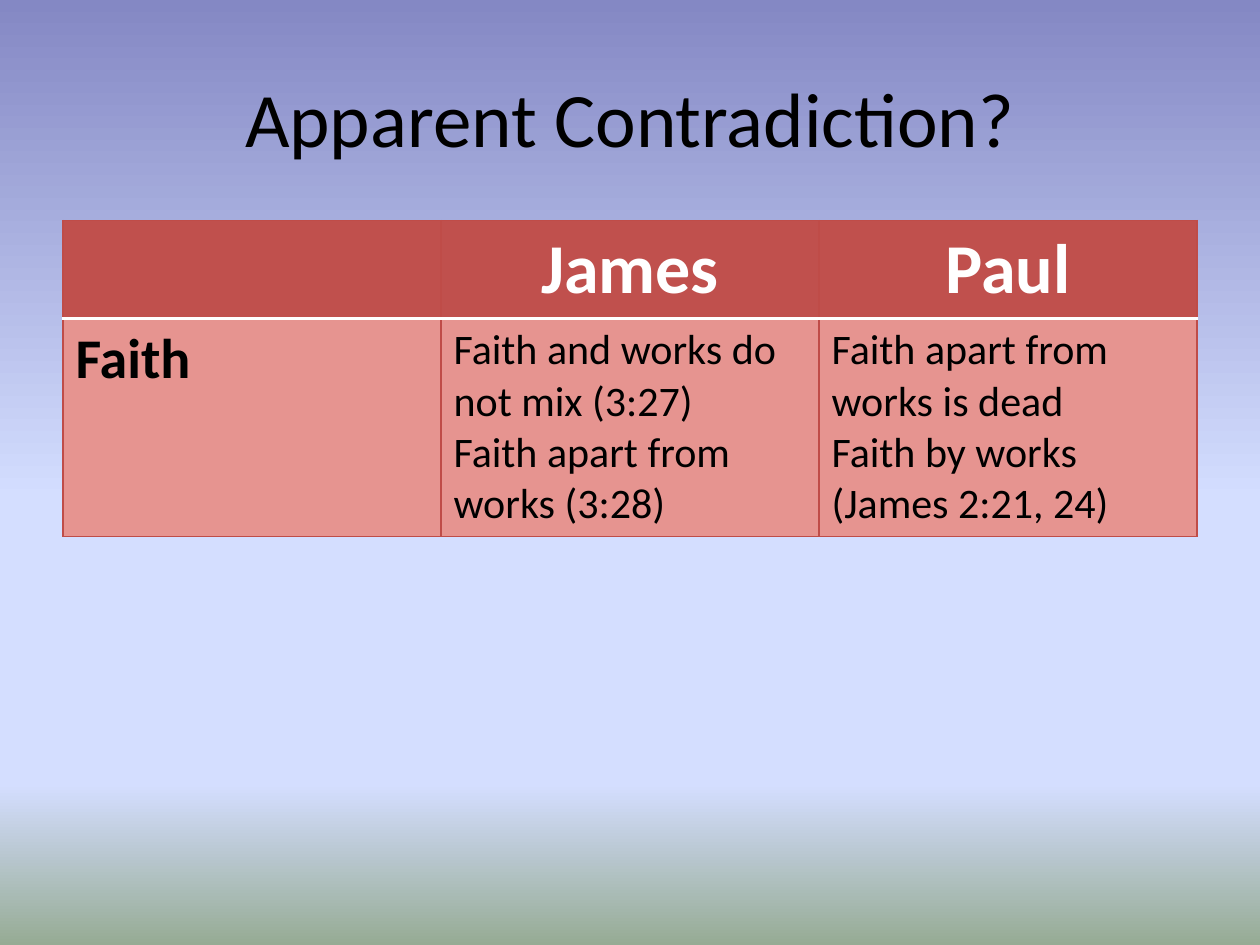
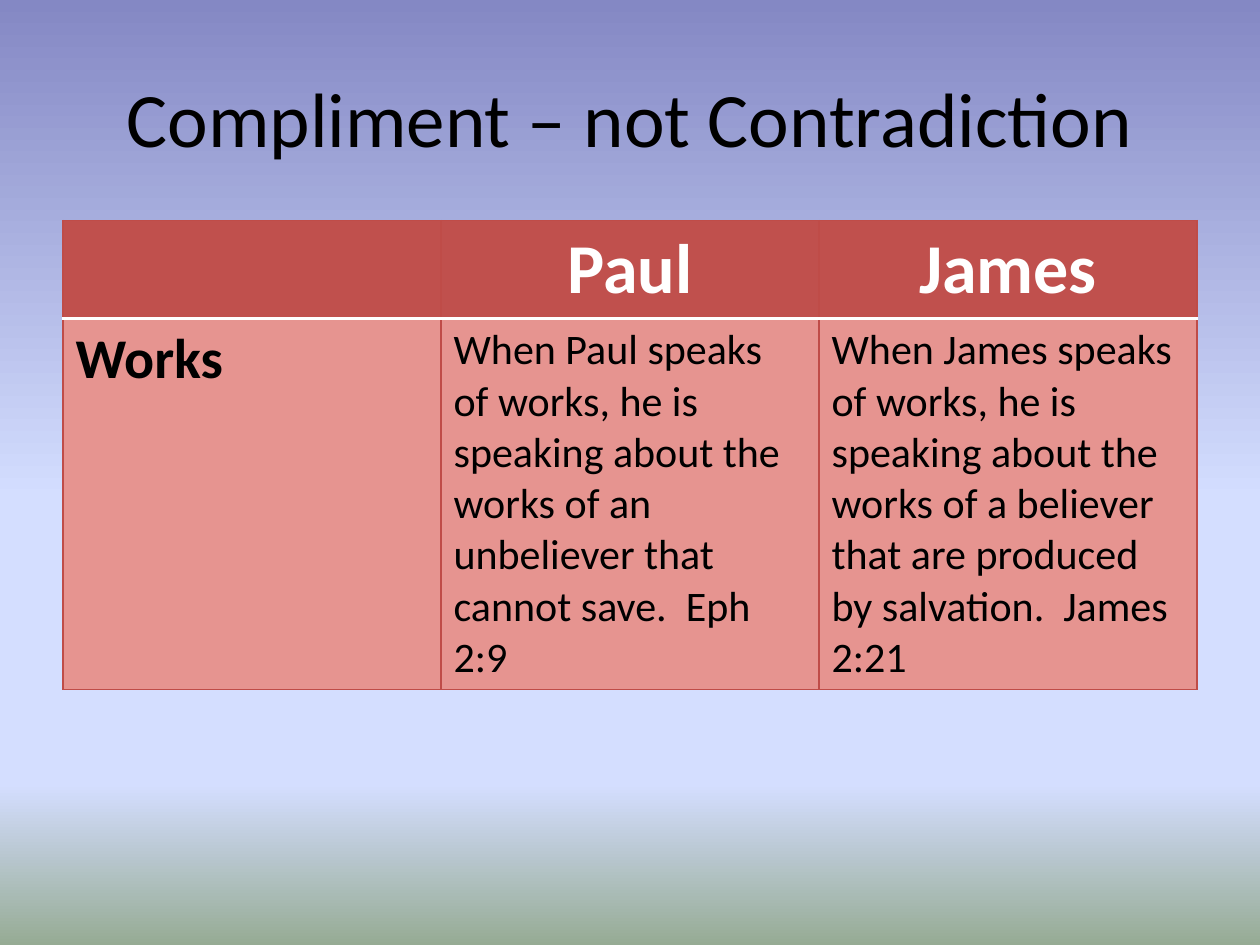
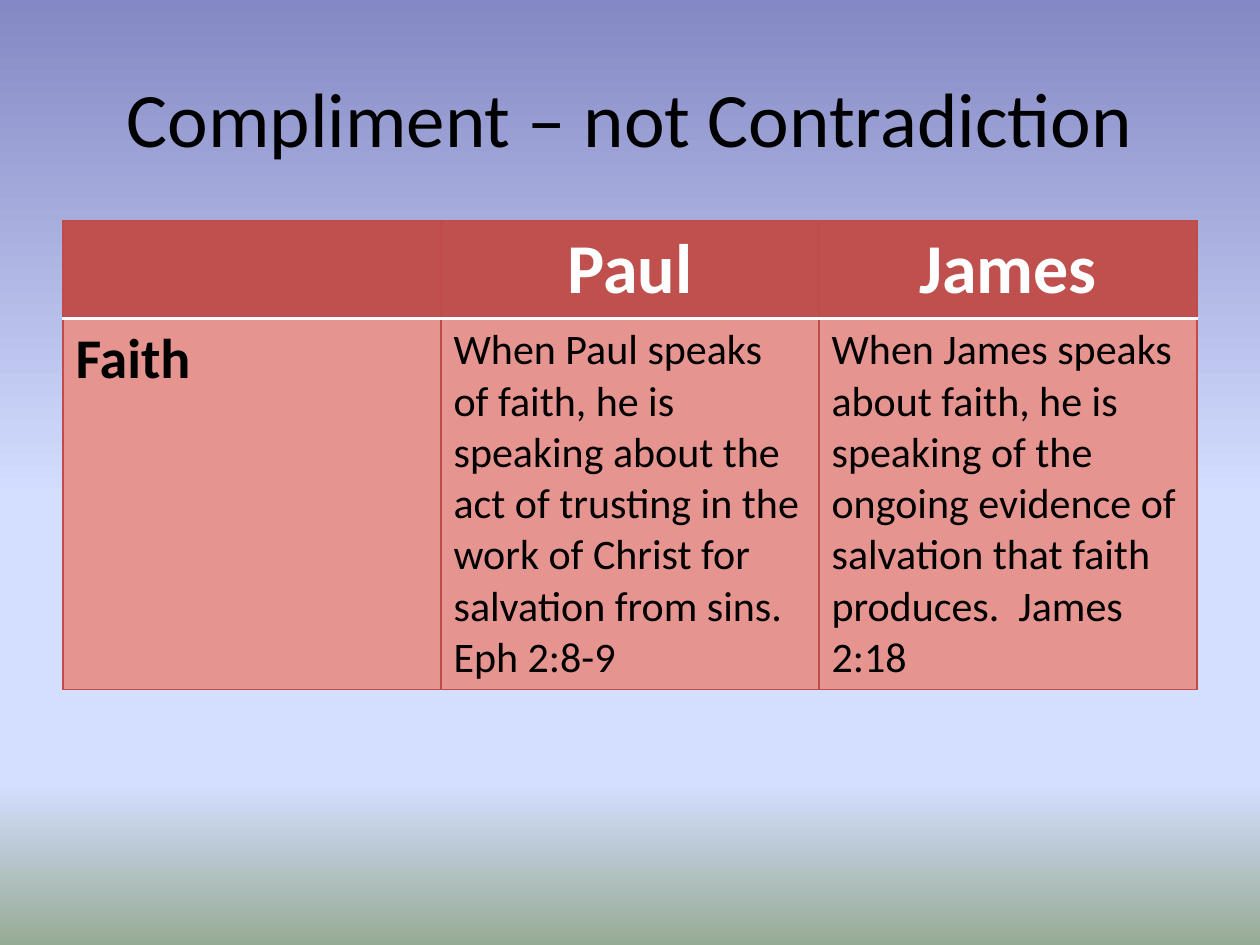
"""Build three slides that compare James and Paul in a two-row table."""
from lxml import etree
from pptx import Presentation
from pptx.dml.color import RGBColor
from pptx.enum.text import MSO_ANCHOR, PP_ALIGN
from pptx.oxml.ns import qn
from pptx.util import Inches, Pt

LEFT, CENTER = PP_ALIGN.LEFT, PP_ALIGN.CENTER
MIDDLE = MSO_ANCHOR.MIDDLE

SLIDES = [
    {"title": "Apparent Contradiction?",
     "header": ["", "James", "Paul"],
     "body": ["Faith",
              "Faith and works do not mix (3:27)\nFaith apart from works (3:28)",
              "Faith apart from works is dead\nFaith by works (James 2:21, 24)"],
     "body_height": 1.73},
    {"title": "Compliment – not Contradiction",
     "header": ["", "Paul", "James"],
     "body": ["Works",
              "When Paul speaks of works, he is speaking about the works of "
              "an unbeliever that cannot save.  Eph 2:9",
              "When James speaks of works, he is speaking about the works of "
              "a believer that are produced by salvation.  James 2:21"],
     "body_height": 2.94},
    {"title": "Compliment – not Contradiction",
     "header": ["", "Paul", "James"],
     "body": ["Faith",
              "When Paul speaks of faith, he is speaking about the act of "
              "trusting in the work of Christ for salvation from sins.  Eph 2:8-9",
              "When James speaks about faith, he is speaking of the ongoing "
              "evidence of salvation that faith produces.  James 2:18"],
     "body_height": 2.94},
]

COLORS = {"text": "000000", "light": "FFFFFF", "header": "C0504D",
          "body": "E69490", "border": "BF4C48"}
GRADIENT = [(0, "8488C4"), (53, "D4DEFF"), (83, "D4DEFF"), (100, "96AB94")]
FONT = "Calibri"
FORMATS = {
    "title": {"size": Pt(44), "bold": False, "color": "text", "align": CENTER},
    "header": {"size": Pt(40), "bold": True, "color": "light", "align": CENTER},
    "label": {"size": Pt(32), "bold": True, "color": "text", "align": LEFT},
    "body": {"size": Pt(24), "bold": False, "color": "text", "align": LEFT},
}
MARGIN, CONTENT_WIDTH = 0.5, 9
TITLE_TOP, TITLE_HEIGHT = 0.3, 1.25
TABLE_TOP, HEADER_HEIGHT = 1.75, 0.78
THIN, RULE = ("border", 0.75), ("light", 2)


def rgb(name):
    return RGBColor.from_string(COLORS[name])


def write(tf, text, style):
    fmt = FORMATS[style]
    tf.text = text
    for p in tf.paragraphs:
        p.alignment = fmt["align"]
        for r in p.runs:
            r.font.name = FONT
            r.font.color.rgb = rgb(fmt["color"])
            for name in ("size", "bold"):
                setattr(r.font, name, fmt[name])


def set_background(master):
    fill = master.background.fill
    fill.gradient()
    fill.gradient_angle = 270
    stops = master.element.find(".//" + qn("a:gsLst"))
    for stop in list(stops):
        stops.remove(stop)
    for position, color in GRADIENT:
        stop = etree.SubElement(stops, qn("a:gs"), pos=str(position * 1000))
        etree.SubElement(stop, qn("a:srgbClr"), val=color)


def set_borders(cell, borders):
    tcPr = cell._tc.get_or_add_tcPr()
    for i, (side, (color, width)) in enumerate(borders.items()):
        ln = etree.Element(qn("a:ln" + side), w=str(Pt(width)))
        fill = etree.SubElement(ln, qn("a:solidFill"))
        etree.SubElement(fill, qn("a:srgbClr"), val=COLORS[color])
        tcPr.insert(i, ln)


def add_title(s, text):
    box = s.shapes.add_textbox(Inches(MARGIN), Inches(TITLE_TOP),
                               Inches(CONTENT_WIDTH), Inches(TITLE_HEIGHT))
    tf = box.text_frame
    tf.word_wrap = True
    tf.vertical_anchor = MIDDLE
    write(tf, text, "title")


def add_comparison(s, content):
    rows = [content["header"], content["body"]]
    heights = [HEADER_HEIGHT, content["body_height"]]
    table = s.shapes.add_table(
        len(rows), len(rows[0]), Inches(MARGIN), Inches(TABLE_TOP),
        Inches(CONTENT_WIDTH), Inches(sum(heights))).table
    table.horz_banding = False
    for i, (texts, height) in enumerate(zip(rows, heights)):
        table.rows[i].height = Inches(height)
        kind = "body" if i else "header"
        borders = {"L": THIN, "R": THIN,
                   "T": RULE if i else THIN, "B": THIN if i else RULE}
        for j, text in enumerate(texts):
            cell = table.cell(i, j)
            set_borders(cell, borders)
            cell.fill.solid()
            cell.fill.fore_color.rgb = rgb(kind)
            write(cell.text_frame, text, "label" if i and not j else kind)


def main():
    prs = Presentation()
    prs.slide_width, prs.slide_height = Inches(10), Inches(7.5)
    set_background(prs.slide_master)
    for content in SLIDES:
        s = prs.slides.add_slide(prs.slide_layouts[6])
        add_title(s, content["title"])
        add_comparison(s, content)
    prs.save("out.pptx")


if __name__ == "__main__":
    main()
